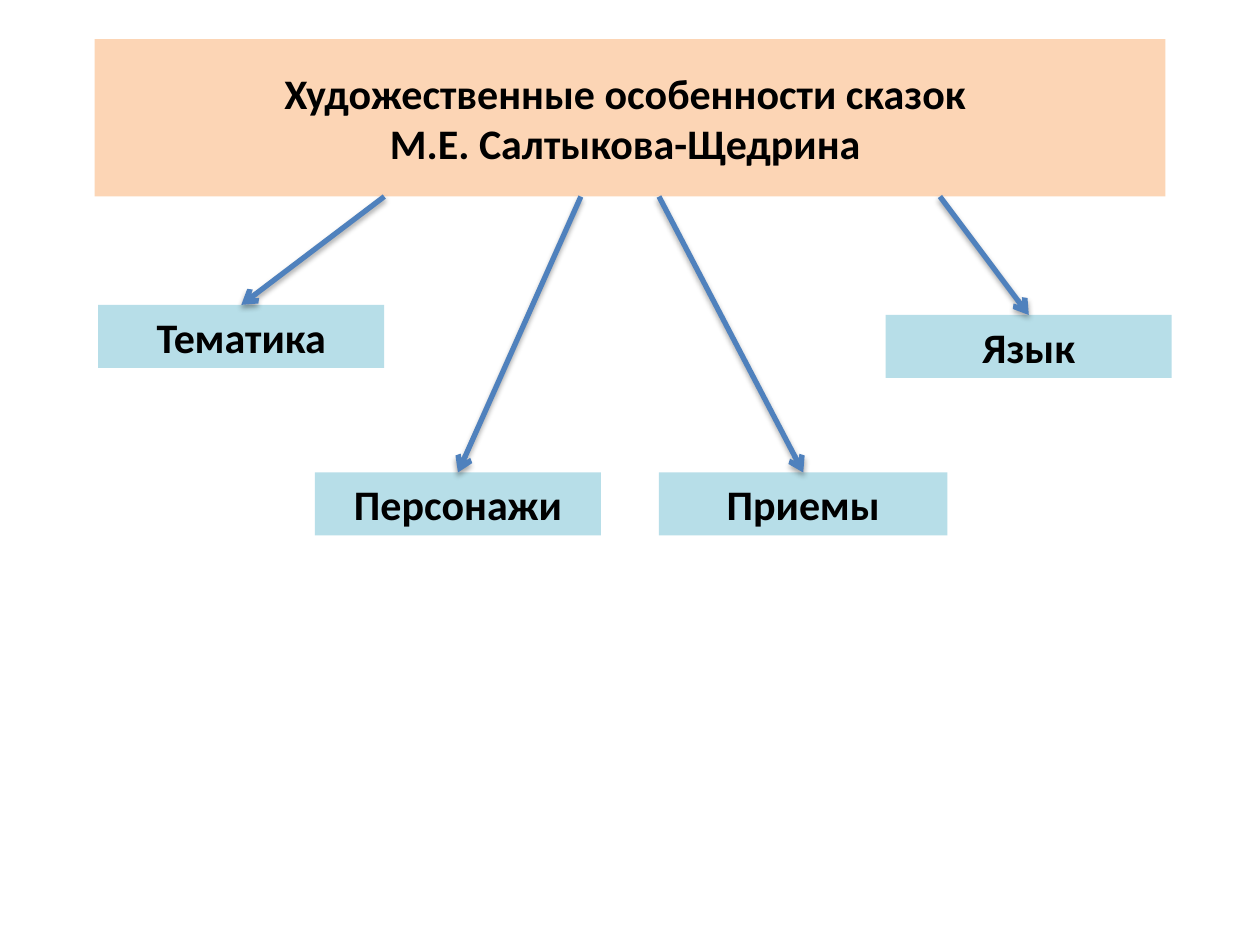
from dataclasses import dataclass

from lxml import etree
from pptx import Presentation
from pptx.dml.color import RGBColor
from pptx.enum.shapes import MSO_CONNECTOR
from pptx.enum.text import MSO_ANCHOR, MSO_AUTO_SIZE, PP_ALIGN
from pptx.oxml import parse_xml
from pptx.oxml.ns import nsdecls, qn
from pptx.shapes.base import BaseShape
from pptx.slide import Slide
from pptx.text.text import TextFrame
from pptx.util import Inches, Pt

STRAIGHT = MSO_CONNECTOR.STRAIGHT
MIDDLE = MSO_ANCHOR.MIDDLE
GROW = MSO_AUTO_SIZE.SHAPE_TO_FIT_TEXT
CENTER = PP_ALIGN.CENTER
TITLE_ONLY = 5


@dataclass(frozen=True)
class Theme:
    font: str = "Calibri"
    size: Pt = Pt(24)
    ink: RGBColor = RGBColor(0, 0, 0)
    peach: RGBColor = RGBColor(0xFC, 0xD5, 0xB5)
    aqua: RGBColor = RGBColor(0xB7, 0xDE, 0xE8)
    blue: RGBColor = RGBColor(0x4F, 0x81, 0xBD)
    weight: Pt = Pt(3)


@dataclass(frozen=True)
class Topic:
    text: str
    left: float
    top: float
    start: float  # where its arrow leaves the title bar
    width: float = 2.27
    height: float = 0.5


THEME = Theme()
BAR = (0.75, 0.31, 8.5, 1.25)
BAR_END = BAR[1] + BAR[3]
HEADING = "Художественные особенности сказок \vМ.Е. Салтыкова-Щедрина "
TOPICS = [
    Topic("Тематика", 0.78, 2.42, 3.05),
    Topic("Персонажи", 2.5, 3.75, 4.61),
    Topic("Приемы", 5.23, 3.75, 5.23, 2.29),
    Topic("Язык", 7.03, 2.5, 7.46),
]
SHADOW = (
    f'<a:effectLst {nsdecls("a")}>'
    '<a:outerShdw blurRad="40000" dist="23000" dir="5400000" rotWithShape="0">'
    '<a:srgbClr val="000000"><a:alpha val="35000"/></a:srgbClr>'
    "</a:outerShdw></a:effectLst>"
)


def paint(shape: BaseShape, color: RGBColor) -> None:
    shape.fill.solid()
    shape.fill.fore_color.rgb = color


def write(frame: TextFrame, text: str) -> None:
    frame.text = text
    frame.word_wrap = True
    for para in frame.paragraphs:
        para.alignment = CENTER
        for run in para.runs:
            font = run.font
            font.name, font.size, font.bold = THEME.font, THEME.size, True
            font.color.rgb = THEME.ink


def draw_title(slide: Slide) -> None:
    title = slide.shapes.title
    title.left, title.top, title.width, title.height = map(Inches, BAR)
    paint(title, THEME.peach)
    write(title.text_frame, HEADING)
    title.text_frame.vertical_anchor = MIDDLE


def draw_topic(slide: Slide, topic: Topic) -> None:
    spot = (topic.left, topic.top, topic.width, topic.height)
    box = slide.shapes.add_textbox(*map(Inches, spot))
    paint(box, THEME.aqua)
    write(box.text_frame, topic.text)
    box.text_frame.auto_size = GROW


def draw_arrow(slide: Slide, topic: Topic) -> None:
    ends = (topic.start, BAR_END, topic.left + topic.width / 2, topic.top)
    arrow = slide.shapes.add_connector(STRAIGHT, *map(Inches, ends))
    arrow.line.color.rgb = THEME.blue
    arrow.line.width = THEME.weight
    # Arrowhead and soft shadow
    props = arrow.element.spPr
    etree.SubElement(props.find(qn("a:ln")), qn("a:tailEnd"), type="arrow")
    props.append(parse_xml(SHADOW))


def main() -> None:
    deck = Presentation()
    deck.slide_width, deck.slide_height = Inches(10), Inches(7.5)
    slide = deck.slides.add_slide(deck.slide_layouts[TITLE_ONLY])

    # Title bar, then topics, then arrows on top
    draw_title(slide)
    for topic in TOPICS:
        draw_topic(slide, topic)
    for topic in TOPICS:
        draw_arrow(slide, topic)

    deck.save("out.pptx")


if __name__ == "__main__":
    main()
